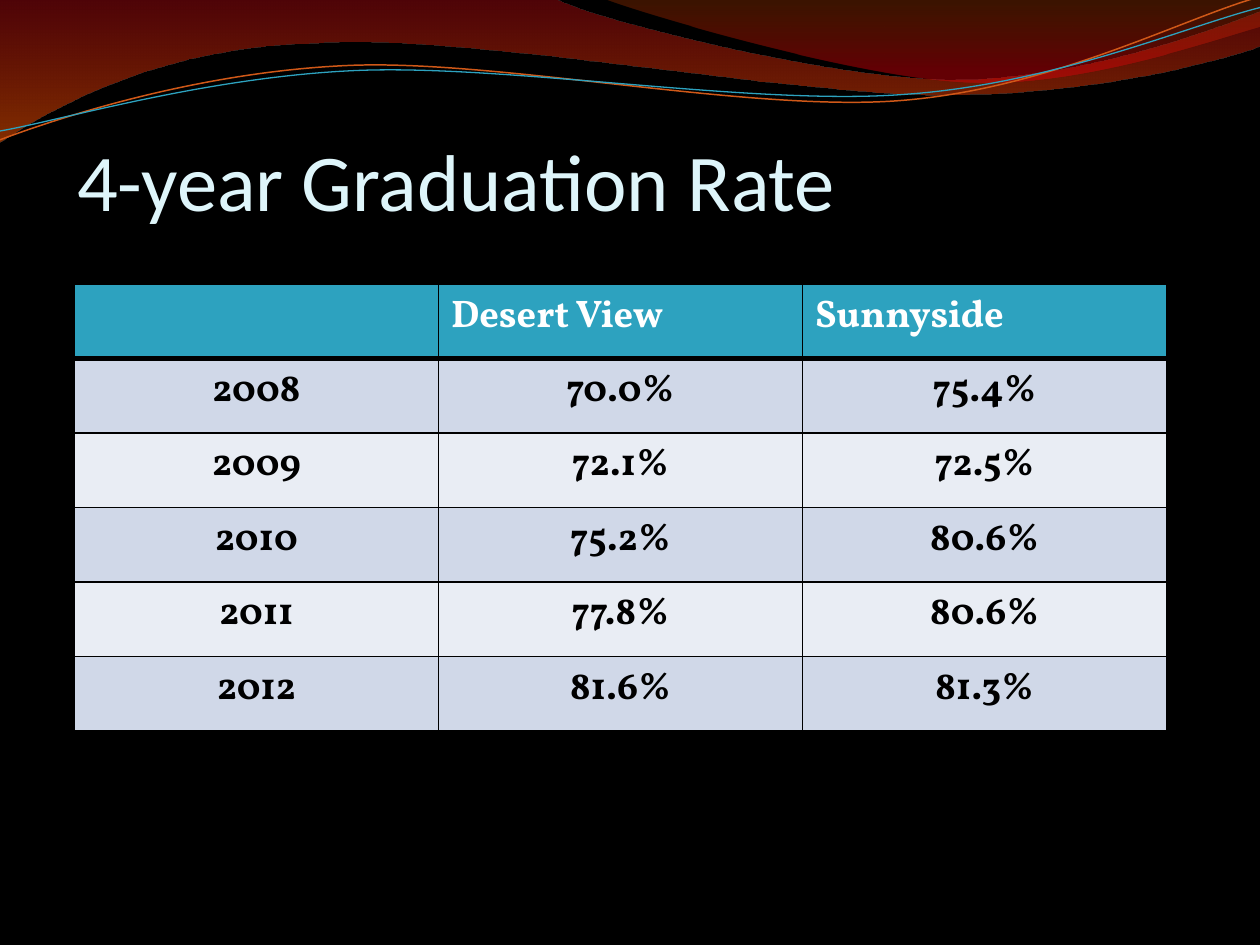
"""Build the 4-year graduation rate slide with its wave header and results table."""
import lxml.etree
import pptx
import pptx.dml.color
import pptx.enum.text
import pptx.oxml.ns
import pptx.util

COLORS = {
    "black": "000000", "white": "FFFFFF", "title": "DEF5FA",
    "header": "2DA2BF", "odd": "D0D8E8", "even": "E9EDF4",
    "red": "AF0911", "orange": "EE5300", "brown": "C24400",
    "crimson": "DC000B", "copper": "CF5818", "teal": "2DA2BF",
}
qn = pptx.oxml.ns.qn


def rgb(name):
    return pptx.dml.color.RGBColor.from_string(COLORS[name])


def add_wave(shapes, start, segments, closed):
    """Draw straight (one point) and cubic (three points) segments given in inches."""
    points = [start] + [point for segment in segments for point in segment]
    outline = [tuple(pptx.util.Cm(2.54 * value) for value in point) for point in points]
    builder = shapes.build_freeform(*outline[0])
    builder.add_line_segments(outline[1:], close=closed)
    wave = builder.convert_to_shape()
    wave.shadow.inherit = False
    steps = iter(list(wave._element.iter(qn("a:lnTo"))))
    for segment in segments:
        first, *others = [next(steps) for point in segment]
        if others:
            first.tag = qn("a:cubicBezTo")
            for step in others:
                first.append(step[0])
                step.getparent().remove(step)
    return wave


deck = pptx.Presentation()
deck.slide_width = pptx.util.Cm(25.4)
deck.slide_height = pptx.util.Cm(19.05)
slide = deck.slides.add_slide(deck.slide_layouts[5])
slide.background.fill.solid()
slide.background.fill.fore_color.rgb = rgb("black")

bands = [
    ((0, 0), [
        [(4.4, -0.01)],
        [(4.76, 0.17), (6.64, 0.63), (7.58, 0.63)],
        [(8.53, 0.63), (9.58, 0.26), (10, 0.09)],
        [(10.01, 0.36)],
        [(9.83, 0.44), (8.7, 0.76), (7.46, 0.75)],
        [(6.22, 0.75), (3.82, 0.28), (2.57, 0.34)],
        [(1.29, 0.36), (0.46, 0.83), (-0.01, 1.13)],
        [(0, 0)],
    ], [(0, "red", 45), (1, "orange", 55)]),
    ((4.79, -0.01), [
        [(5.09, 0.11), (6.82, 0.62), (7.69, 0.65)],
        [(8.56, 0.69), (9.61, 0.32), (10, 0.21)],
        [(10, 0)],
        [(4.79, -0.01)],
    ], [(0, "brown", 30), (0.8, "crimson", 45)]),
]
for start, segments, stops in bands:
    band = add_wave(slide.shapes, start, segments, True)
    band.line.fill.background()
    band.fill.gradient()
    band.fill.gradient_angle = 270
    for stop, (position, color, opacity) in zip(band.fill.gradient_stops, stops):
        stop.position = position
        stop.color.rgb = rgb(color)
    for tint, (position, color, opacity) in zip(band._element.spPr.iter(qn("a:srgbClr")), stops):
        lxml.etree.SubElement(tint, qn("a:alpha"), val=str(opacity * 1000))

strands = [
    ((0, 1.11), [
        [(0.48, 0.93), (1.58, 0.57), (2.77, 0.52)],
        [(3.95, 0.47), (5.93, 0.89), (7.13, 0.8)],
        [(8.33, 0.71), (9.38, 0.15), (9.98, -0.02)],
    ], "copper", 0.85),
    ((0, 1.04), [
        [(0.47, 0.96), (1.64, 0.61), (2.83, 0.56)],
        [(4.03, 0.51), (5.97, 0.84), (7.17, 0.75)],
        [(8.36, 0.67), (9.41, 0.21), (10, 0.06)],
    ], "teal", 0.75),
]
for start, segments, color, width in strands:
    strand = add_wave(slide.shapes, start, segments, False)
    strand.fill.background()
    strand.line.color.rgb = rgb(color)
    strand.line.width = pptx.util.Pt(width)

title = slide.shapes.title
slide.shapes._spTree.append(title._element)
title.left, title.top = pptx.util.Cm(1.3), pptx.util.Cm(2.12)
title.width, title.height = pptx.util.Cm(22.86), pptx.util.Cm(3)
title.text_frame.text = "4-year Graduation Rate"
title.text_frame.auto_size = pptx.enum.text.MSO_AUTO_SIZE.NONE
title.text_frame.vertical_anchor = pptx.enum.text.MSO_ANCHOR.MIDDLE
heading = title.text_frame.paragraphs[0]
heading.alignment = pptx.enum.text.PP_ALIGN.LEFT
heading.runs[0].font.name = "Calibri"
heading.runs[0].font.size = pptx.util.Pt(46)
heading.runs[0].font.color.rgb = rgb("title")

rates = [
    ("", "Desert View", "Sunnyside"),
    ("2008", "70.0%", "75.4%"),
    ("2009", "72.1%", "72.5%"),
    ("2010", "75.2%", "80.6%"),
    ("2011", "77.8%", "80.6%"),
    ("2012", "81.6%", "81.3%"),
]
table = slide.shapes.add_table(
    len(rates), len(rates[0]),
    pptx.util.Cm(1.5), pptx.util.Cm(5.73), pptx.util.Cm(22.02), pptx.util.Cm(9),
).table
for column in table.columns:
    column.width = pptx.util.Cm(7.34)
for index, (row, values) in enumerate(zip(table.rows, rates)):
    row.height = pptx.util.Cm(1.5)
    for cell, value in zip(row.cells, values):
        cell.fill.solid()
        cell.fill.fore_color.rgb = rgb("header" if index == 0 else "odd" if index % 2 else "even")
        widths = {"L": 1, "R": 1, "T": 3 if index == 1 else 1, "B": 3 if index == 0 else 1}
        for place, (side, width) in enumerate(widths.items()):
            border = lxml.etree.Element(qn(f"a:ln{side}"), w=str(pptx.util.Pt(width)))
            ink = lxml.etree.SubElement(border, qn("a:solidFill"))
            lxml.etree.SubElement(ink, qn("a:srgbClr"), val=COLORS["black"])
            cell._tc.get_or_add_tcPr().insert(place, border)
        cell.text_frame.text = value
        entry = cell.text_frame.paragraphs[0]
        if index:
            entry.alignment = pptx.enum.text.PP_ALIGN.CENTER
        for run in entry.runs:
            run.font.name = "Vollkorn"
            run.font.size = pptx.util.Pt(22)
            run.font.bold = True
            run.font.color.rgb = rgb("black" if index else "white")

deck.save("out.pptx")
